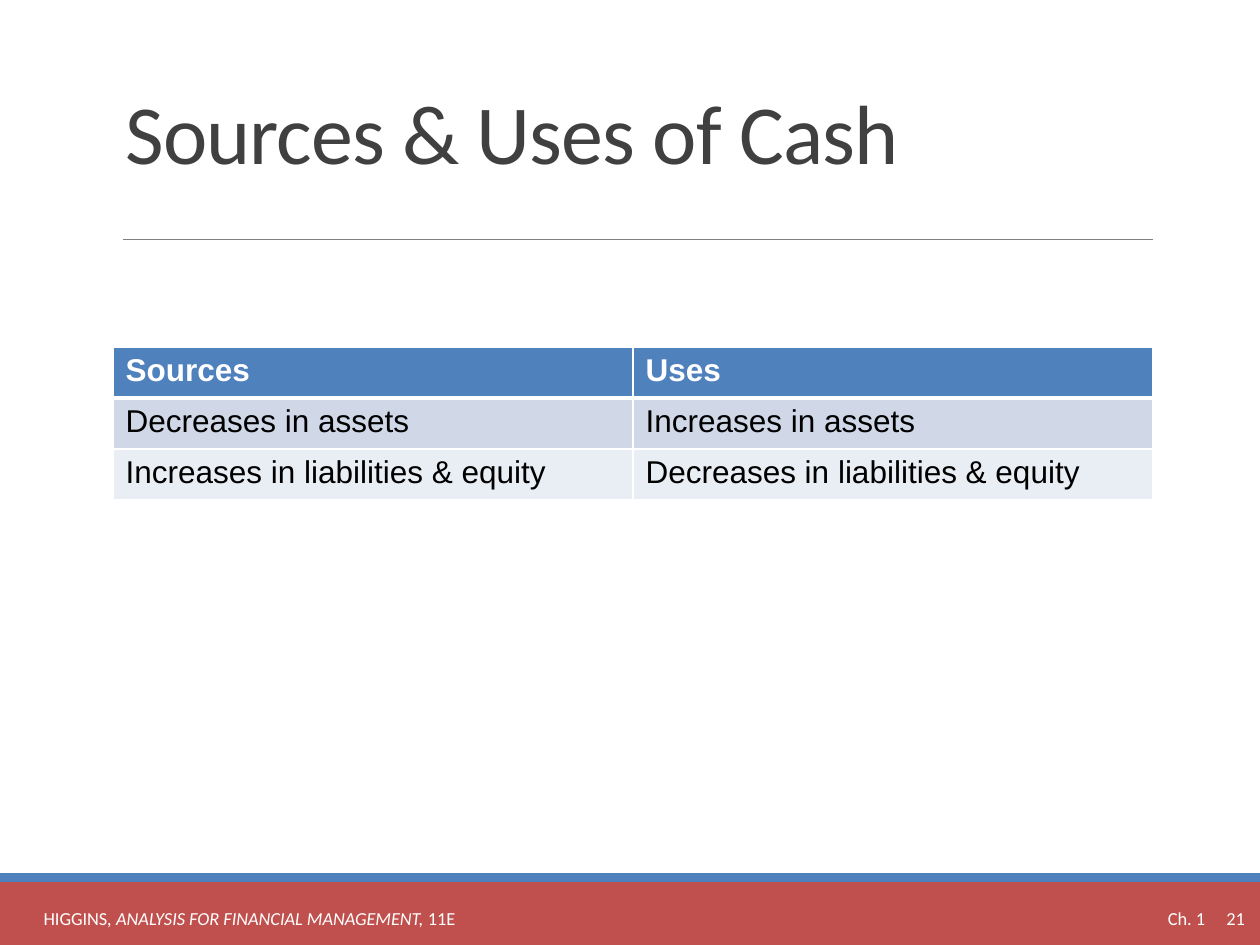
import pptx
import pptx.util
import pptx.dml.color
import pptx.enum.text
import pptx.enum.shapes
import pptx.oxml
import pptx.oxml.ns
from lxml import etree

SCALE = 914400 / 126
HUES = {"red": "C0504D", "blue": "4F81BD", "rule": "808080", "title": "404040",
        "white": "FFFFFF", "black": "000000", "dark": "D0D8E8", "pale": "E9EDF4"}

TITLE = "Sources & Uses of Cash"
ROWS = [
    ("Sources", "Uses"),
    ("Decreases in assets", "Increases in assets"),
    ("Increases in liabilities & equity", "Decreases in liabilities & equity"),
]
BOOK = [("HIGGINS", False), (", ANALYSIS FOR FINANCIAL MANAGEMENT, ", True), ("11E", False)]
PAGE = "Ch. 1\t21"
BANDS = [("red", (0, 882, 1260, 63)), ("blue", (0, 873, 1260, 9))]
RULE = (123, 239, 1153, 239)
GRID = (113, 347, 1040, 153)

ALIGN = pptx.enum.text.PP_ALIGN
qn = pptx.oxml.ns.qn


def px(n):
    return pptx.util.Emu(round(n * SCALE))


def color(name):
    return pptx.dml.color.RGBColor.from_string(HUES[name])


def add_run(para, text, size, face, hue, bold=False, ital=False):
    run = para.add_run()
    run.text = text
    font = run.font
    font.size, font.name = pptx.util.Pt(size), face
    font.bold, font.italic = bold, ital
    font.color.rgb = color(hue)
    return run


def add_text(slide, box, align):
    frame = slide.shapes.add_textbox(*map(px, box)).text_frame
    frame.word_wrap = True
    frame.vertical_anchor = pptx.enum.text.MSO_ANCHOR.MIDDLE
    para = frame.paragraphs[0]
    para.alignment = align
    return frame, para


def add_edge(cell, side, width):
    props = cell._tc.get_or_add_tcPr()
    line = etree.SubElement(props, qn("a:ln" + side), w=str(pptx.util.Pt(width)))
    fill = etree.SubElement(line, qn("a:solidFill"))
    etree.SubElement(fill, qn("a:srgbClr"), val=HUES["white"])


def add_bands(slide):
    for hue, box in BANDS:
        band = slide.shapes.add_shape(pptx.enum.shapes.MSO_SHAPE.RECTANGLE, *map(px, box))
        band.shadow.inherit = False
        band.fill.solid()
        band.fill.fore_color.rgb = color(hue)
        band.line.fill.background()


def add_rule(slide):
    rule = slide.shapes.add_connector(pptx.enum.shapes.MSO_CONNECTOR.STRAIGHT, *map(px, RULE))
    rule.line.color.rgb = color("rule")
    rule.line.width = pptx.util.Pt(0.5)
    etree.SubElement(rule._element.spPr, qn("a:effectLst"))


def add_grid(slide):
    table = slide.shapes.add_table(len(ROWS), len(ROWS[0]), *map(px, GRID)).table
    for r, row in enumerate(ROWS):
        head = r == 0
        hue = "blue" if head else ("pale", "dark")[r % 2]
        for c, text in enumerate(row):
            cell = table.cell(r, c)
            for side in "LRTB":
                thick = (head and side == "B") or (r == 1 and side == "T")
                add_edge(cell, side, 3 if thick else 1)
            cell.fill.solid()
            cell.fill.fore_color.rgb = color(hue)
            add_run(cell.text_frame.paragraphs[0], text, 18, "Arial",
                    "white" if head else "black", bold=head)


def add_title(slide):
    _, para = add_text(slide, (113, 39, 1040, 200), ALIGN.LEFT)
    para.line_spacing = 0.85
    run = add_run(para, TITLE, 48, "Calibri", "title")
    run.font._element.set("spc", "-50")


def add_foot(slide):
    _, para = add_text(slide, (0, 893, 499, 50), ALIGN.CENTER)
    for text, ital in BOOK:
        add_run(para, text, 10.5, "Calibri", "white", ital=ital)
    frame, para = add_text(slide, (1123, 893, 136, 50), ALIGN.LEFT)
    frame.margin_left = px(45)
    tabs = etree.SubElement(para._p.get_or_add_pPr(), qn("a:tabLst"))
    etree.SubElement(tabs, qn("a:tab"), pos=str(px(77)), algn="r")
    add_run(para, PAGE, 10.5, "Calibri", "white")


def main():
    deck = pptx.Presentation()
    deck.slide_width, deck.slide_height = px(1260), px(945)
    slide = deck.slides.add_slide(deck.slide_layouts[6])
    for part in (add_bands, add_rule, add_title, add_grid, add_foot):
        part(slide)
    deck.save("out.pptx")


if __name__ == "__main__":
    main()
